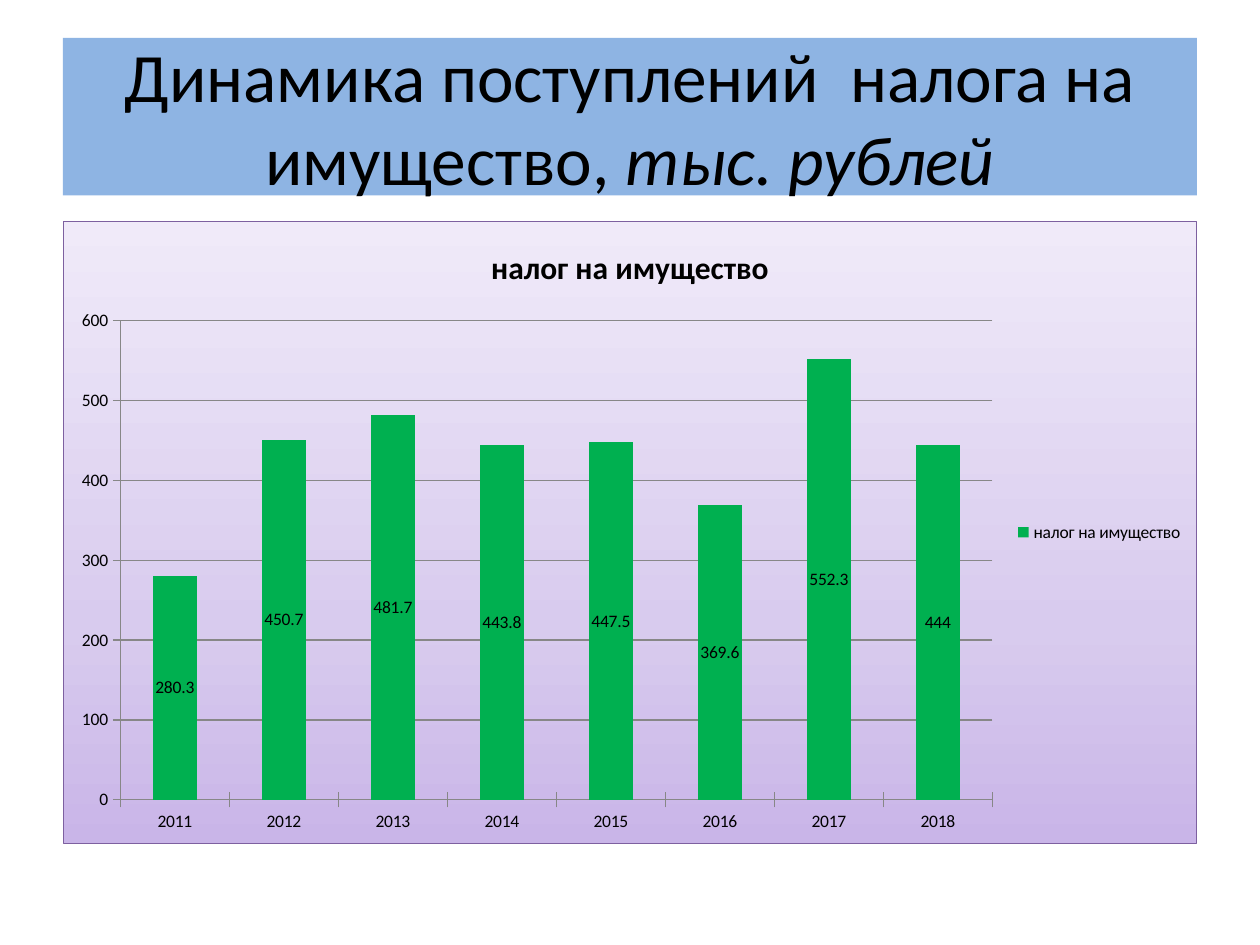
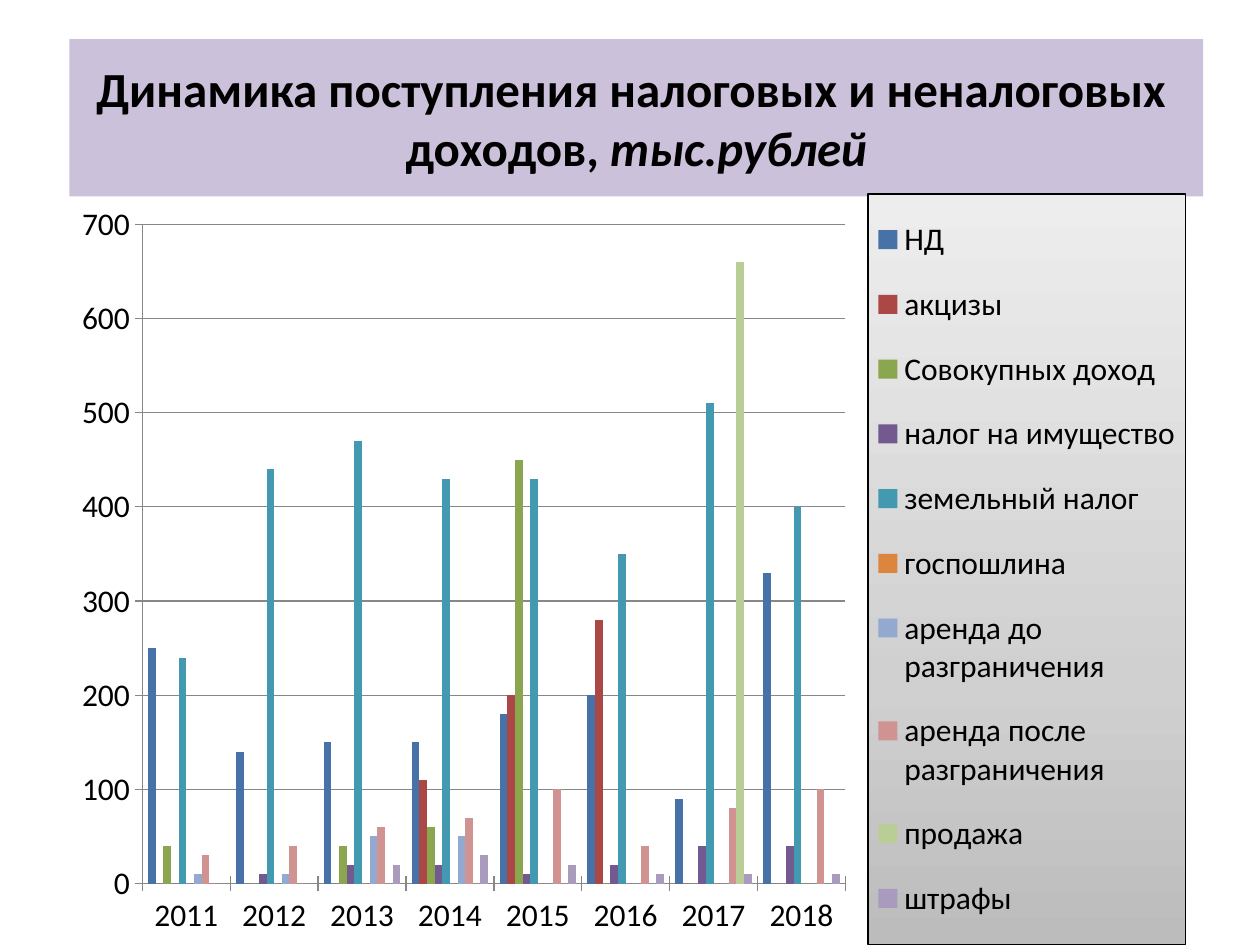
import pptx
import pptx.util
import pptx.oxml
import pptx.oxml.ns
import pptx.chart.data
import pptx.dml.color
import pptx.enum.chart
import pptx.enum.shapes
import pptx.enum.text

Inches, Pt = pptx.util.Inches, pptx.util.Pt
RGB = pptx.dml.color.RGBColor.from_string
qn = pptx.oxml.ns.qn
chart_enum = pptx.enum.chart

FONT = "Calibri"
COLORS = {
    "text": "000000", "axis": "878787",
    "blue band": "8EB4E3", "lilac band": "CCC1DA",
    "property tax": "00B050", "panel border": "7D60A0",
}
LILAC_STOPS = [(0, "C9B5E8"), (35, "D8CBEE"), (100, "F0EAF9")]
GREY_STOPS = [(0, "BCBCBC"), (35, "D0D0D0"), (100, "EDEDED")]
YEARS = [str(year) for year in range(2011, 2019)]


def set_layout(parent, index, target, x, y, w, h):
    """Place a chart part by fractions of the chart area."""
    for old in parent.findall(qn("c:layout")):
        parent.remove(old)
    inner = f'<c:layoutTarget val="{target}"/>' if target else ""
    modes = '<c:xMode val="edge"/><c:yMode val="edge"/>'
    sizes = "".join(f'<c:{k} val="{v}"/>' for k, v in zip("xywh", (x, y, w, h)))
    parent.insert(index, pptx.oxml.parse_xml(
        f'<c:layout {pptx.oxml.ns.nsdecls("c")}><c:manualLayout>'
        f'{inner}{modes}{sizes}</c:manualLayout></c:layout>'))


def add_gradient_box(parent, stops, border):
    """Give the chart area or legend a bottom-to-top gradient and a border."""
    gs = "".join(f'<a:gs pos="{pos * 1000}"><a:srgbClr val="{color}"/></a:gs>'
                 for pos, color in stops)
    parent.find(qn("c:txPr")).addprevious(pptx.oxml.parse_xml(
        f'<c:spPr {pptx.oxml.ns.nsdecls("c", "a")}><a:gradFill><a:gsLst>{gs}</a:gsLst>'
        f'<a:lin ang="16200000" scaled="1"/></a:gradFill><a:ln w="9525"><a:solidFill>'
        f'<a:srgbClr val="{border}"/></a:solidFill></a:ln></c:spPr>'))


# What differs from slide to slide
pages = [
    {
        "band": (0.5, 0.3), "band color": "blue band", "size": 39.6, "bold": False,
        "title": ["Динамика поступлений  налога на имущество, ", "тыс. рублей"],
        "type": chart_enum.XL_CHART_TYPE.COLUMN_STACKED, "overlap": 100,
        "chart": (0.5, 1.75, 9, 4.95), "chart size": 10, "axis max": 600,
        "plot": (0.05, 0.16, 0.77, 0.77),
        "series": [("налог на имущество", COLORS["property tax"],
                    [280.3, 450.7, 481.7, 443.8, 447.5, 369.6, 552.3, 444])],
    },
    {
        "band": (0.55, 0.31), "band color": "lilac band", "size": 28, "bold": True,
        "title": ["Динамика поступления налоговых и неналоговых  доходов, ", "тыс.рублей"],
        "type": chart_enum.XL_CHART_TYPE.COLUMN_CLUSTERED, "overlap": 0,
        "chart": (0.5, 1.48, 9, 6.02), "chart size": 18, "axis max": 700,
        "plot": (0.07, 0.05, 0.62, 0.87),
        "series": [
            ("НД", "4672A8", [250, 140, 150, 150, 180, 200, 90, 330]),
            ("акцизы", "AB4744", [0, 0, 0, 110, 200, 280, 0, 0]),
            ("Совокупных доход", "8AA64F", [40, 0, 40, 60, 450, 0, 0, 0]),
            ("налог на имущество", "725990", [0, 10, 20, 20, 10, 20, 40, 40]),
            ("земельный налог", "4299B0", [240, 440, 470, 430, 430, 350, 510, 400]),
            ("госпошлина", "DC853E", [0, 0, 0, 0, 0, 0, 0, 0]),
            ("аренда до разграничения", "93A9CF", [10, 10, 50, 50, 0, 0, 0, 0]),
            ("аренда после разграничения", "D19392", [30, 40, 60, 70, 100, 40, 80, 100]),
            ("продажа", "B9CD96", [0, 0, 0, 0, 0, 0, 660, 0]),
            ("штрафы", "A99BBD", [0, 0, 20, 30, 20, 10, 10, 10]),
        ],
    },
]

prs = pptx.Presentation()
prs.slide_width, prs.slide_height = Inches(10), Inches(7.5)
charts = []

for page in pages:
    slide = prs.slides.add_slide(prs.slide_layouts[6])

    # Title band, with the unit in italics
    left, top = page["band"]
    band = slide.shapes.add_shape(pptx.enum.shapes.MSO_SHAPE.RECTANGLE,
                                  Inches(left), Inches(top), Inches(9), Inches(1.25))
    band.shadow.inherit = False
    band.fill.solid()
    band.fill.fore_color.rgb = RGB(COLORS[page["band color"]])
    band.line.fill.background()
    band.text_frame.word_wrap = True
    band.text_frame.vertical_anchor = pptx.enum.text.MSO_ANCHOR.MIDDLE
    heading = band.text_frame.paragraphs[0]
    heading.alignment = pptx.enum.text.PP_ALIGN.CENTER
    for words, italic in zip(page["title"], (False, True)):
        run = heading.add_run()
        run.text = words
        run.font.name, run.font.size = FONT, Pt(page["size"])
        run.font.bold, run.font.italic = page["bold"], italic
        run.font.color.rgb = RGB(COLORS["text"])

    # Column chart by year
    data = pptx.chart.data.CategoryChartData()
    data.categories = YEARS
    for name, _, values in page["series"]:
        data.add_series(name, values)
    chart = slide.shapes.add_chart(page["type"], *map(Inches, page["chart"]), data).chart
    charts.append(chart)
    chart.font.name, chart.font.size = FONT, Pt(page["chart size"])
    chart.font.color.rgb = RGB(COLORS["text"])
    chart.has_title = False

    columns = chart.plots[0]
    columns.gap_width, columns.overlap = 150, page["overlap"]
    columns.vary_by_categories = False
    for series, (_, color, _) in zip(columns.series, page["series"]):
        series.format.fill.solid()
        series.format.fill.fore_color.rgb = RGB(color)

    # Axes and gridlines
    for axis in (chart.category_axis, chart.value_axis):
        axis.major_tick_mark = chart_enum.XL_TICK_MARK.CROSS
        axis.minor_tick_mark = chart_enum.XL_TICK_MARK.NONE
        axis.format.line.color.rgb = RGB(COLORS["axis"])
        axis.format.line.width = Pt(0.75)
    amounts = chart.value_axis
    amounts.minimum_scale, amounts.maximum_scale = 0, page["axis max"]
    amounts.major_unit = 100
    amounts.has_major_gridlines = True
    amounts.major_gridlines.format.line.color.rgb = RGB(COLORS["axis"])
    amounts.major_gridlines.format.line.width = Pt(0.75)

    # Legend
    chart.has_legend = True
    chart.legend.position = chart_enum.XL_LEGEND_POSITION.RIGHT
    chart.legend.include_in_layout = False
    chart.legend.font.name, chart.legend.font.size = FONT, Pt(page["chart size"])
    chart.legend.font.color.rgb = RGB(COLORS["text"])
    plot_area = chart.element.find(".//" + qn("c:plotArea"))
    set_layout(plot_area, 0, "inner", *page["plot"])

property_tax, all_income = charts

# Property tax: lilac panel, chart title and value labels
add_gradient_box(property_tax.element, LILAC_STOPS, COLORS["panel border"])
caption = property_tax.chart_title.text_frame.paragraphs[0].add_run()
caption.text = "налог на имущество"
caption.font.name, caption.font.size, caption.font.bold = FONT, Pt(18), True
caption.font.color.rgb = RGB(COLORS["text"])
property_tax.chart_title.include_in_layout = False
tax_plot = property_tax.plots[0]
tax_plot.has_data_labels = True
tax_plot.data_labels.show_value = True
tax_plot.data_labels.position = chart_enum.XL_LABEL_POSITION.CENTER

# All income: tall grey legend
income_legend = all_income.element.find(".//" + qn("c:legend"))
set_layout(income_legend, 1, None, 0.71, 0.01, 0.28, 0.99)
add_gradient_box(income_legend, GREY_STOPS, COLORS["text"])

prs.save("out.pptx")
